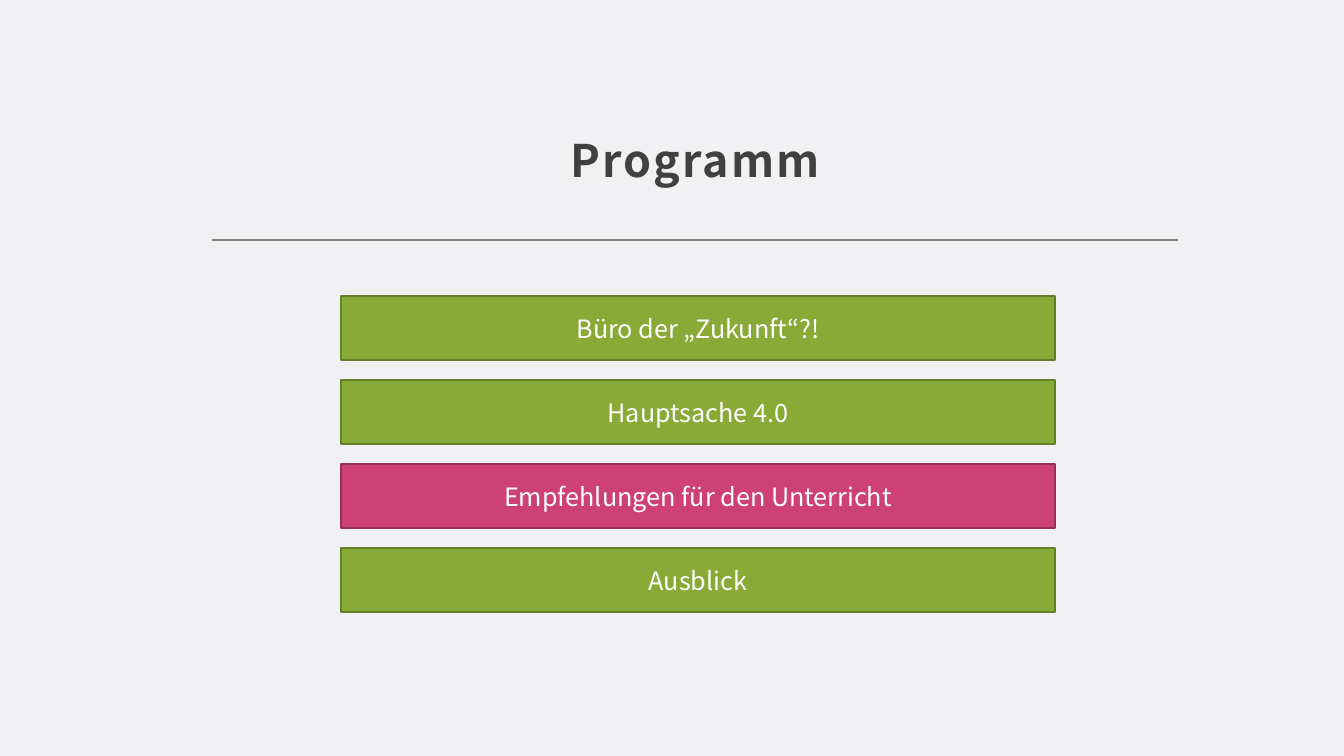
from dataclasses import dataclass

from lxml import etree
from pptx import Presentation
from pptx.dml.color import RGBColor
from pptx.enum.shapes import MSO_CONNECTOR, MSO_SHAPE
from pptx.enum.text import MSO_ANCHOR, PP_ALIGN
from pptx.oxml.ns import qn
from pptx.util import Emu, Pt

TITLE = "Programm"
TOPICS = [
    ("Büro der „Zukunft“?!", False),
    ("Hauptsache 4.0", False),
    ("Empfehlungen für den Unterricht", True),
    ("Ausblick", False),
]

SIZE = (1344, 756)
HEAD = (212, 48, 967, 148)
RULE = (212, 240, 1178, 240)
BAR = (341, 296, 714, 64)
STEP = 84
PAD = 12

RECT = MSO_SHAPE.RECTANGLE
STRAIGHT = MSO_CONNECTOR.STRAIGHT
CENTER = PP_ALIGN.CENTER
BOTTOM = MSO_ANCHOR.BOTTOM
MIDDLE = MSO_ANCHOR.MIDDLE


@dataclass(frozen=True)
class Theme:
    font: str = "Noto Sans CJK JP"
    back: str = "F1F0F3"
    ink: str = "404040"
    rule: str = "808080"
    white: str = "FFFFFF"
    plain: tuple = ("87AB36", "647F28")
    focus: tuple = ("CE4174", "983056")
    title: int = 32
    body: int = 18


THEME = Theme()


def px(*nums):
    return [Emu(round(num * 914400 / 100.8)) for num in nums]


def color(code):
    return RGBColor.from_string(code)


def write(shape, text, size, ink, anchor, bold=False, gap=0, lead=1.0):
    frame = shape.text_frame
    frame.word_wrap = True
    frame.vertical_anchor = anchor
    para = frame.paragraphs[0]
    para.alignment = CENTER
    para.line_spacing = lead
    run = para.add_run()
    run.text = text
    font = run.font
    font.name = THEME.font
    font.size = Pt(size)
    font.bold = bold
    font.color.rgb = color(ink)
    if gap:
        font._element.set("spc", str(gap))


def add_rule(slide):
    rule = slide.shapes.add_connector(STRAIGHT, *px(*RULE))
    rule.line.color.rgb = color(THEME.rule)
    rule.line.width = Pt(2)
    etree.SubElement(rule._element.spPr, qn("a:effectLst"))


def add_title(slide):
    box = slide.shapes.add_textbox(*px(*HEAD))
    frame = box.text_frame
    frame.margin_left, frame.margin_right = px(PAD, PAD)
    frame.margin_top, frame.margin_bottom = px(PAD, 10)
    write(box, TITLE, THEME.title, THEME.ink, BOTTOM, bold=True, gap=150, lead=1.3)


def add_bars(slide):
    left, top, width, height = BAR
    for row, (text, focus) in enumerate(TOPICS):
        fill, edge = THEME.focus if focus else THEME.plain
        bar = slide.shapes.add_shape(RECT, *px(left, top + row * STEP, width, height))
        bar.shadow.inherit = False
        bar.fill.solid()
        bar.fill.fore_color.rgb = color(fill)
        bar.line.color.rgb = color(edge)
        bar.line.width = Pt(1)
        write(bar, text, THEME.body, THEME.white, MIDDLE)


def main():
    deck = Presentation()
    deck.slide_width, deck.slide_height = px(*SIZE)
    slide = deck.slides.add_slide(deck.slide_layouts[6])
    slide.background.fill.solid()
    slide.background.fill.fore_color.rgb = color(THEME.back)
    add_rule(slide)
    add_title(slide)
    add_bars(slide)
    deck.save("out.pptx")


if __name__ == "__main__":
    main()
